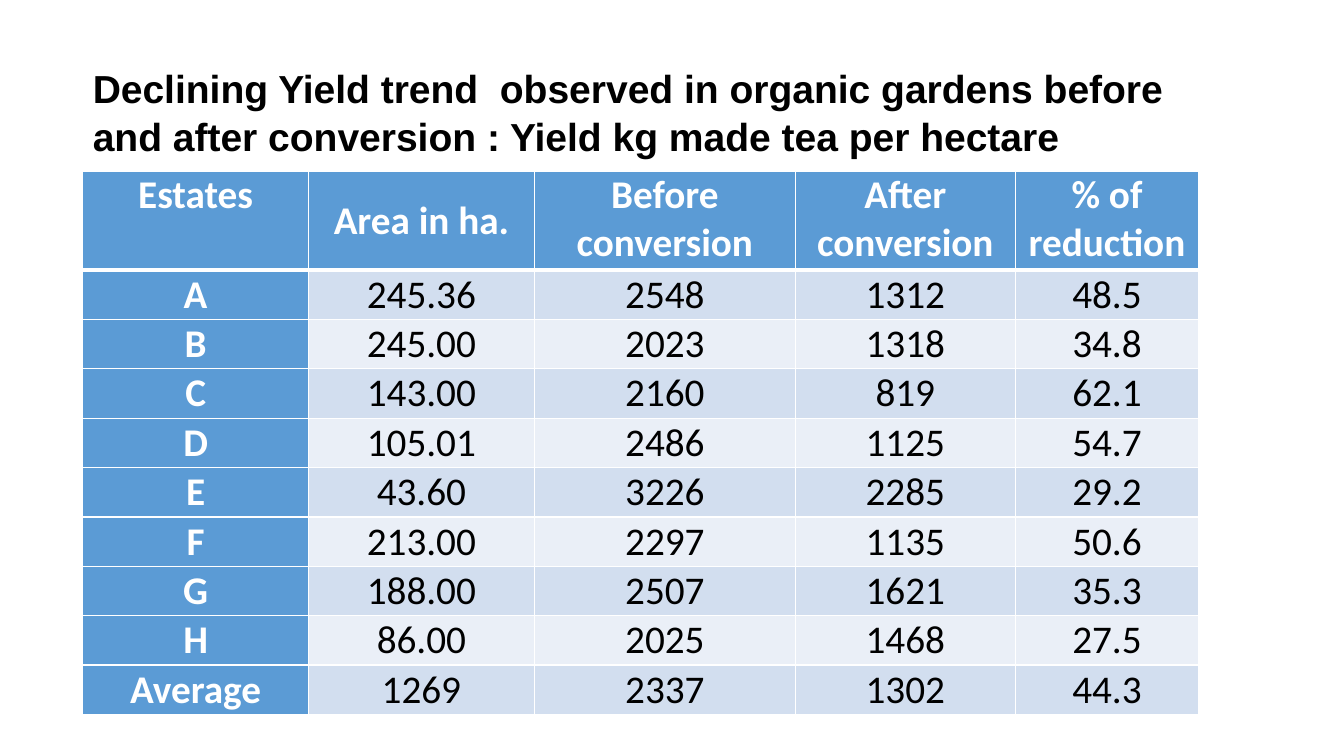
from lxml.etree import SubElement
from pptx import Presentation
from pptx.dml.color import RGBColor
from pptx.enum.text import MSO_ANCHOR as Anchor, MSO_AUTO_SIZE as AutoSize, PP_ALIGN as Align
from pptx.oxml.ns import qn
from pptx.util import Inches, Pt

WHITE = RGBColor(0xFF, 0xFF, 0xFF)
BLACK = RGBColor(0, 0, 0)
HEAD_BLUE = RGBColor(0x5B, 0x9B, 0xD5)
BANDS = (RGBColor(0xD2, 0xDE, 0xEF), RGBColor(0xEA, 0xEF, 0xF7))

LEFT = Inches(0.82)
ROW = Inches(0.49)
COLUMN_WIDTHS = (2.24, 2.24, 2.59, 2.18, 1.82)

HEADING = ("Declining Yield trend  observed in organic gardens before "
           "and after conversion : Yield kg made tea per hectare")
YIELDS = (
    ("Estates", "Area in ha.", "Before conversion", "After conversion", "% of reduction"),
    ("A", "245.36", "2548", "1312", "48.5"),
    ("B", "245.00", "2023", "1318", "34.8"),
    ("C", "143.00", "2160", "819", "62.1"),
    ("D", "105.01", "2486", "1125", "54.7"),
    ("E", "43.60", "3226", "2285", "29.2"),
    ("F", "213.00", "2297", "1135", "50.6"),
    ("G", "188.00", "2507", "1621", "35.3"),
    ("H", "86.00", "2025", "1468", "27.5"),
    ("Average", "1269", "2337", "1302", "44.3"),
)

TITLE_FRAME = {"word_wrap": True, "auto_size": AutoSize.NONE,
               "vertical_anchor": Anchor.MIDDLE, "margin_bottom": Inches(0.2)}
TITLE_PARAGRAPH = {"alignment": Align.LEFT, "line_spacing": 1.04}
CELL_MARGINS = {"margin_left": Inches(0.07), "margin_right": Inches(0.07),
                "margin_top": 0, "margin_bottom": 0}
CELL_PARAGRAPH = {"alignment": Align.CENTER, "space_before": Pt(6), "space_after": Pt(6)}


def apply(target, values):
    for name, value in values.items():
        setattr(target, name, value)


def write(paragraph, text, font, size, color, bold):
    run = paragraph.add_run()
    run.text = text
    apply(run.font, {"name": font, "size": Pt(size), "bold": bold})
    run.font.color.rgb = color


def draw_borders(cell, points_by_side):
    """Put white rules on the cell's sides, ahead of its fill as the schema asks."""
    properties = cell._tc.get_or_add_tcPr()
    for place, (side, points) in enumerate(points_by_side.items()):
        rule = SubElement(properties, qn(f"a:ln{side}"), w=str(Pt(points)))
        fill = SubElement(rule, qn("a:solidFill"))
        SubElement(fill, qn("a:srgbClr"), val=str(WHITE))
        properties.insert(place, rule)


def fill_cell(cell, text, row, column):
    is_head = row == 0 or column == 0
    apply(cell, CELL_MARGINS)
    header_top = row == 0 and column != 1
    cell.vertical_anchor = Anchor.TOP if header_top else Anchor.MIDDLE
    cell.fill.solid()
    cell.fill.fore_color.rgb = HEAD_BLUE if is_head else BANDS[(row - 1) % 2]
    paragraph = cell.text_frame.paragraphs[0]
    apply(paragraph, CELL_PARAGRAPH)
    write(paragraph, text, "Calibri", 28, WHITE if is_head else BLACK, is_head)
    draw_borders(cell, {"L": 1, "R": 1, "T": 3 if row == 1 else 1, "B": 3 if row == 0 else 1})


def add_heading(slide):
    title = slide.shapes.title
    apply(title, {"left": LEFT, "top": Inches(0.45),
                  "width": Inches(11.5), "height": Inches(1.45)})
    apply(title.text_frame, TITLE_FRAME)
    paragraph = title.text_frame.paragraphs[0]
    apply(paragraph, TITLE_PARAGRAPH)
    write(paragraph, HEADING, "Arial", 27.9, BLACK, True)


def add_yield_table(slide):
    row_count = len(YIELDS)
    table = slide.shapes.add_table(
        row_count, len(COLUMN_WIDTHS), LEFT, Inches(1.7),
        Inches(sum(COLUMN_WIDTHS)), ROW * (row_count + 1)).table
    table.first_col = True
    for column, width in zip(table.columns, COLUMN_WIDTHS):
        column.width = Inches(width)
    for r, values in enumerate(YIELDS):
        table.rows[r].height = ROW * 2 if r == 0 else ROW
        for c, text in enumerate(values):
            fill_cell(table.cell(r, c), text, r, c)


def main():
    deck = Presentation()
    apply(deck, {"slide_width": Inches(13.33), "slide_height": Inches(7.5)})
    slide = deck.slides.add_slide(deck.slide_layouts[5])
    add_heading(slide)
    add_yield_table(slide)
    deck.save("out.pptx")


if __name__ == "__main__":
    main()
